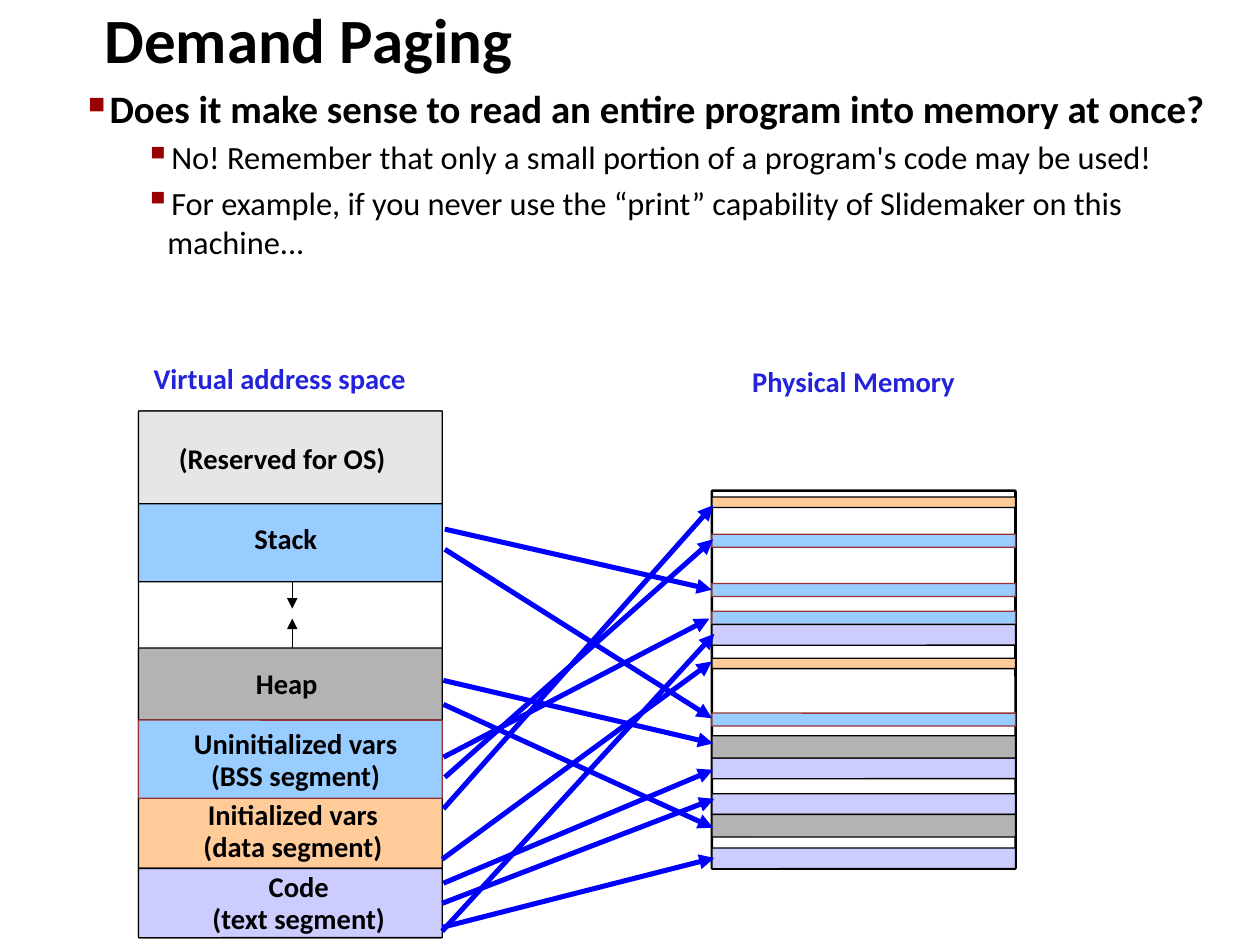
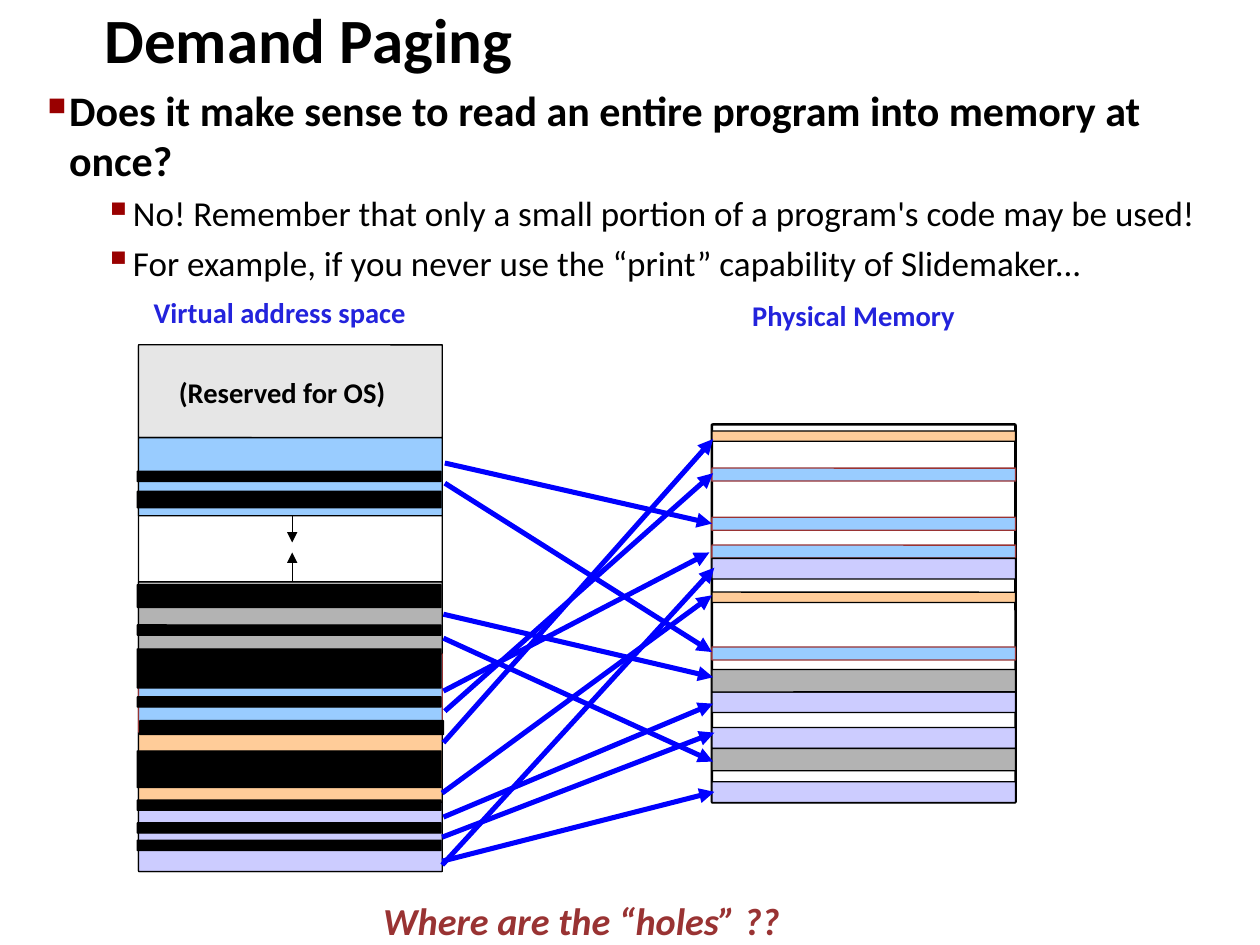
from dataclasses import dataclass
from itertools import accumulate

from pptx import Presentation, util as u
from pptx.dml.color import RGBColor
from pptx.enum import shapes, text
from pptx.oxml.ns import qn
from lxml import etree

Pt = u.Pt
FONT = "Calibri"
COLORS = {
    "black": "000000", "reserved": "E6E6E6", "blue": "99CCFF", "gray": "B3B3B3",
    "orange": "FFCC99", "lilac": "CCCCFF", "brown": "993333", "heading": "2323DC",
    "arrow": "0000FF", "bullet": "990000",
}
LABEL_SIZE = 16.3
THIN = 0.75
SPACE_X, MEMORY_X, COLUMN_W = 79.2, 406.8, 173.5
MEMORY_Y, MEMORY_H = 45.5, 216
GROWTH_X = 167


@dataclass(frozen=True)
class Segment:
    """Part of the address space; label offsets count from its top."""
    height: float
    fill: str | None
    line: str = "black"
    label: tuple[str, ...] = ()
    label_x: float = 0
    label_dy: float = 0
    label_w: float = 0
    centered: bool = False


@dataclass(frozen=True)
class Frame:
    y: float
    height: float
    fill: str
    line: str = "black"


@dataclass(frozen=True)
class Arrow:
    x1: float
    y1: float
    x2: float
    y2: float


@dataclass(frozen=True)
class Hole:
    y: float
    height: float = 5.8
    x: float = 78.5


@dataclass(frozen=True)
class Outline:
    """Body text of a slide."""
    x: float
    width: float
    height: float
    main_size: float
    sub_size: float
    example: str


# Vertical positions below count from the top of the address space
SEGMENTS = [
    Segment(53, "reserved", "black", ("(Reserved for OS)",), 102.2, 18.5, 142.6),
    Segment(44.6, "blue", "black", ("Stack",), 145.4, 11.6, 42.5),
    Segment(37.8, None),
    Segment(41.2, "gray", "black", ("Heap",), 146.2, 12, 42),
    Segment(44.6, "blue", "brown", ("Uninitialized vars", "(BSS segment)"), 100, 4.7, 138, True),
    Segment(40.1, "orange", "black", ("Initialized vars", "(data segment)"), 108.7, 1.1, 117.4, True),
    Segment(39.6, "lilac", "black", ("Code", "(text segment)"), 113.8, 2, 113.8, True),
]
SPACE_H = sum(seg.height for seg in SEGMENTS)
SEGMENT_TOPS = list(accumulate((seg.height for seg in SEGMENTS), initial=0))[:-1]

FRAMES = (
    [Frame(y, 5.9, "orange") for y in (49.2, 141.3)]
    + [Frame(y, 7.4, "blue", "brown") for y in (70.4, 98.5, 114.4, 172.6)]
    + [Frame(y, 11.8, "lilac") for y in (122, 198.3, 218.7, 249.7)]
    + [Frame(y, 12.8, "gray") for y in (185.5, 230.6)]
)
GROWTH = [Arrow(GROWTH_X, 142.4, GROWTH_X, 118.6), Arrow(GROWTH_X, 97.6, GROWTH_X, 112.9)]
MAPPINGS = [
    Arrow(253.4, 153.9, 407.5, 189.9),
    Arrow(253.4, 167.6, 407.5, 238.1),
    Arrow(252.7, 295, 408.2, 255.4),
    Arrow(253.4, 269.8, 407.5, 205),
    Arrow(252.7, 281.3, 408.2, 221.6),
    Arrow(252.7, 256.1, 406.8, 143.1),
    Arrow(253.4, 227.3, 407.5, 53.8),
    Arrow(252.7, 297.2, 408.2, 127.3),
    Arrow(253.4, 197.8, 405.4, 118.6),
    Arrow(254.2, 209.3, 407.5, 73.3),
    Arrow(254.2, 67.5, 406.8, 102.1),
    Arrow(254.2, 79, 406.8, 175.5),
]
HOLES = [
    Hole(72.2), Hole(83.7, 9.4), Hole(137, 13), Hole(160), Hole(173.7, 22.3), Hole(201.1),
    Hole(214.7, 7.9, 79.9), Hole(232, 20.9), Hole(260.1), Hole(273.1), Hole(283.1),
]


def rgb(name: str) -> RGBColor:
    return RGBColor.from_string(COLORS[name])


def add_run(p, content: str, size: float, color: str = "black",
            bold: bool = True, italic: bool = False) -> None:
    r = p.add_run()
    r.text = content
    r.font.name = FONT
    r.font.size = Pt(size)
    r.font.bold = bold
    r.font.italic = italic
    r.font.color.rgb = rgb(color)


def add_box(s, x: float, y: float, w: float, h: float, inset: bool = False):
    tf = s.shapes.add_textbox(Pt(x), Pt(y), Pt(w), Pt(h)).text_frame
    tf.word_wrap = True
    if not inset:
        tf.margin_left = tf.margin_right = tf.margin_top = tf.margin_bottom = 0
    return tf


def add_label(s, lines: tuple[str, ...], x: float, y: float, w: float, color: str = "black",
              size: float = LABEL_SIZE, centered: bool = False, italic: bool = False) -> None:
    tf = add_box(s, x, y, w, 1.17 * size * len(lines))
    for i, line in enumerate(lines):
        p = tf.add_paragraph() if i else tf.paragraphs[0]
        p.line_spacing = 0.94
        p.alignment = text.PP_ALIGN.CENTER if centered else text.PP_ALIGN.LEFT
        add_run(p, line, size, color, italic=italic)


def add_block(tree, x: float, y: float, h: float, fill: str | None,
              line: str = "black", weight: float = THIN) -> None:
    sp = tree.add_shape(shapes.MSO_SHAPE.ROUNDED_RECTANGLE, Pt(x), Pt(y), Pt(COLUMN_W), Pt(h))
    sp.adjustments[0] = 0.003
    sp.shadow.inherit = False
    if fill:
        sp.fill.solid()
        sp.fill.fore_color.rgb = rgb(fill)
    else:
        sp.fill.background()
    sp.line.color.rgb = rgb(line)
    sp.line.width = Pt(weight)


def add_arrow(s, arrow: Arrow, top: float, color: str, weight: float) -> None:
    cxn = s.shapes.add_connector(shapes.MSO_CONNECTOR.STRAIGHT, Pt(arrow.x1), Pt(top + arrow.y1),
                                 Pt(arrow.x2), Pt(top + arrow.y2))
    cxn.line.color.rgb = rgb(color)
    cxn.line.width = Pt(weight)
    etree.SubElement(cxn.line._get_or_add_ln(), qn("a:tailEnd"), type="triangle")
    etree.SubElement(cxn._element.spPr, qn("a:effectLst"))


def add_bullet(p, char: str, percent: int, margin: float, hanging: float) -> None:
    pPr = p._p.get_or_add_pPr()
    pPr.set("marL", str(Pt(margin)))
    pPr.set("indent", str(-Pt(hanging)))
    clr = etree.SubElement(pPr, qn("a:buClr"))
    etree.SubElement(clr, qn("a:srgbClr"), val=COLORS["bullet"])
    etree.SubElement(pPr, qn("a:buSzPct"), val=str(percent * 1000))
    etree.SubElement(pPr, qn("a:buChar"), char=char)


def add_title(s) -> None:
    tf = add_box(s, 52.6, 5.8, 614.9, 36.7, inset=True)
    tf.vertical_anchor = text.MSO_ANCHOR.MIDDLE
    p = tf.paragraphs[0]
    p.line_spacing = 0.94
    add_run(p, "Demand Paging", 36)


def add_outline(s, body: Outline) -> None:
    tf = add_box(s, body.x, 44.6, body.width, body.height, inset=True)
    p = tf.paragraphs[0]
    add_bullet(p, "■", 60, 20.2, 12.2)
    add_run(p, "Does it make sense to read an entire program into memory at once?", body.main_size)
    for line in ("No! Remember that only a small portion of a program's code may be used!",
                 body.example):
        p = tf.add_paragraph()
        p.level = 1
        p.space_before = Pt(0.2 * body.sub_size)
        add_bullet(p, "▪", 110, 53.3, 13)
        add_run(p, line, body.sub_size, bold=False)


def add_address_space(s, top: float, labelled: tuple[int, ...]) -> None:
    add_arrow(s, GROWTH[0], top, "black", THIN)
    add_block(s.shapes, SPACE_X, top, SPACE_H, None)
    placed = list(zip(SEGMENTS, SEGMENT_TOPS))
    # Brown borders lie over black ones
    for seg, y in sorted(placed, key=lambda item: item[0].line == "brown"):
        if seg.fill:
            add_block(s.shapes, SPACE_X, top + y, seg.height, seg.fill, seg.line)
    add_arrow(s, GROWTH[1], top, "black", THIN)
    for i in labelled:
        seg, y = placed[i]
        add_label(s, seg.label, seg.label_x, top + y + seg.label_dy, seg.label_w,
                  centered=seg.centered)


def add_physical_memory(s, top: float) -> None:
    tree = s.shapes.add_group_shape().shapes
    add_block(tree, MEMORY_X, top + MEMORY_Y, MEMORY_H, None, weight=1.45)
    for frame in sorted(FRAMES, key=lambda f: f.line != "brown"):
        add_block(tree, MEMORY_X, top + frame.y, frame.height, frame.fill, frame.line)


def add_slide(prs, body: Outline, top: float, labelled: tuple[int, ...]):
    s = prs.slides.add_slide(prs.slide_layouts[6])
    add_title(s)
    add_outline(s, body)
    add_address_space(s, top, labelled)
    add_physical_memory(s, top)
    add_label(s, ("Virtual address space",), 87.8, top - 26.8, 169.2, "heading")
    add_label(s, ("Physical Memory",), 429.8, top - 25.2, 134, "heading")
    for arrow in MAPPINGS:
        add_arrow(s, arrow, top, "arrow", 2.89)
    return s


def main() -> None:
    prs = Presentation()
    prs.slide_width, prs.slide_height = Pt(720), Pt(540)

    # Slide 1: every segment named
    example = "For example, if you never use the “print” capability of Slidemaker"
    add_slide(prs, Outline(35.3, 670.3, 152.6, 22.2, 18.5, example + " on this machine..."),
              234.9, (0, 1, 3, 4, 5, 6))

    # Slide 2: unused pages blacked out
    top = 197.1
    s = add_slide(prs, Outline(12.2, 693.4, 340.6, 24, 20, example + "..."), top, (0,))
    for hole in HOLES:
        add_block(s.shapes, hole.x, top + hole.y, hole.height, "black")
    add_label(s, ("Where are the “holes” ??",), 218.9, 514.8, 378, "brown", 21.8, italic=True)

    prs.save("out.pptx")


if __name__ == "__main__":
    main()
